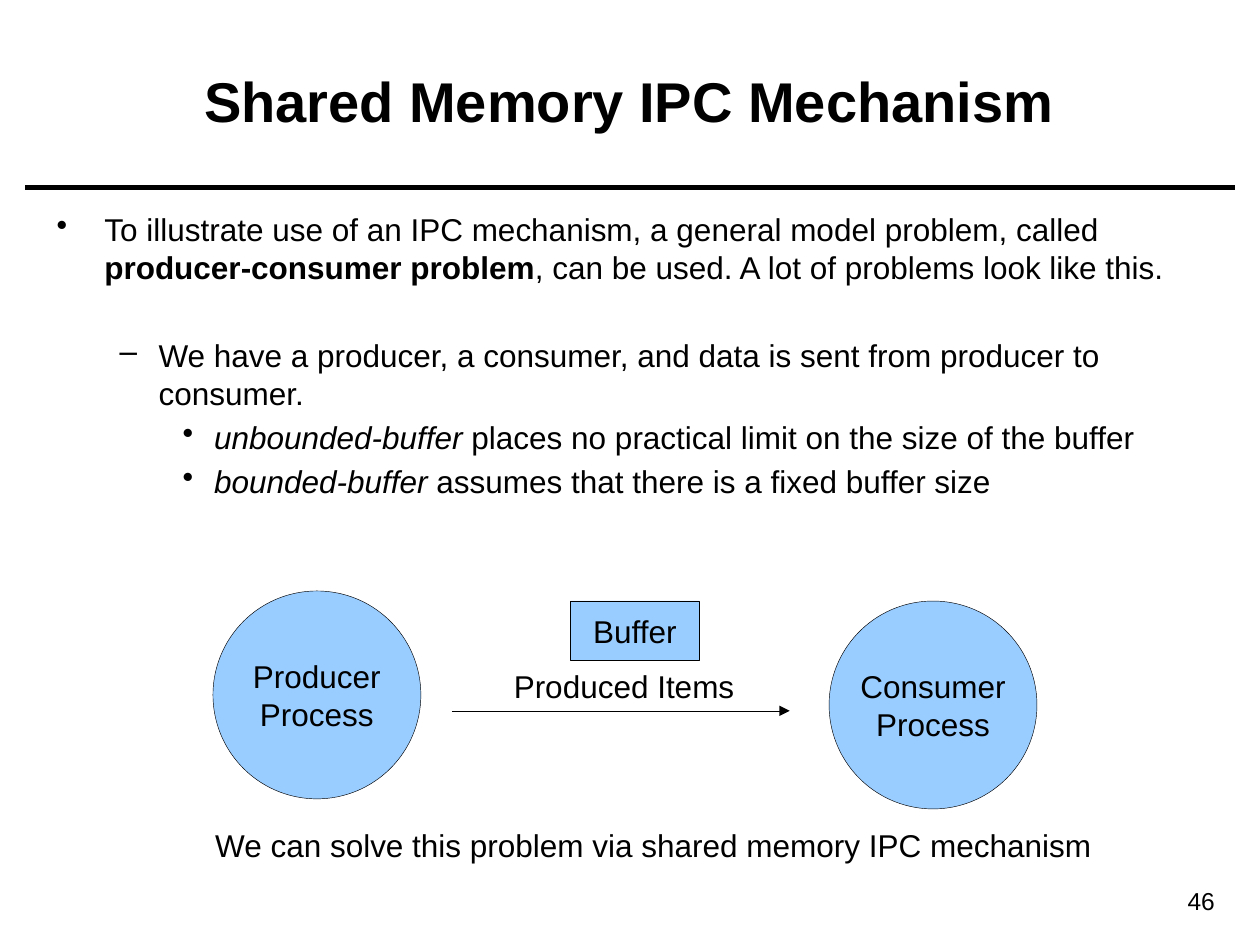
from lxml import etree
from pptx import Presentation
from pptx.dml.color import RGBColor
from pptx.enum.shapes import MSO_CONNECTOR, MSO_SHAPE
from pptx.enum.text import MSO_ANCHOR, PP_ALIGN
from pptx.oxml.ns import qn
from pptx.util import Inches, Pt

CENTER, LEFT, RIGHT = PP_ALIGN.CENTER, PP_ALIGN.LEFT, PP_ALIGN.RIGHT
MIDDLE, TOP = MSO_ANCHOR.MIDDLE, MSO_ANCHOR.TOP
OVAL, RECT = MSO_SHAPE.OVAL, MSO_SHAPE.RECTANGLE
STRAIGHT = MSO_CONNECTOR.STRAIGHT

COLORS = {"ink": "000000", "node": "99CCFF", "paper": "FFFFFF"}
FONT = "Arial"
WIDTH, HEIGHT = 10, 7.5
MARGIN, CONTENT_W = 0.35, 9.29

LEVELS = [("•", 0.38, 0.38), ("–", 0.81, 0.31), ("•", 1.25, 0.25)]
BULLETS = [
    (0, 3.6, [
        ("To illustrate use of an IPC mechanism, a general model problem, called ", ""),
        ("producer-consumer problem", "b"),
        (", can be used. A lot of problems look like this.", ""),
    ]),
    (1, 28.8, [("We have a producer, a consumer, and data is sent from producer to consumer.", "")]),
    (2, 3.6, [("unbounded-buffer", "i"),
              (" places no practical limit on the size of the buffer", "")]),
    (2, 3.6, [("bounded-buffer", "i"), (" assumes that there is a fixed buffer size", "")]),
]


def color(name):
    return RGBColor.from_string(COLORS[name])


def inches(box):
    return [Inches(v) for v in box]


def within(box, x, y, w, h):
    left, top, width, height = box
    return left + x * width, top + y * height, w * width, h * height


def style(p, size=18, align=LEFT, bold=False):
    p.alignment = align
    p.font.name = FONT
    p.font.size = Pt(size)
    p.font.bold = bold
    p.font.color.rgb = color("ink")


def write(tf, text, size=18, align=LEFT, anchor=TOP, bold=False, wrap=False):
    tf.word_wrap = wrap
    tf.vertical_anchor = anchor
    p = tf.paragraphs[0]
    p.text = text
    style(p, size, align, bold)


def add_label(s, box, text, **options):
    write(s.shapes.add_textbox(*inches(box)).text_frame, text, **options)


def add_line(s, start, end, weight, arrow=False):
    line = s.shapes.add_connector(STRAIGHT, *inches(start + end))
    line.line.color.rgb = color("ink")
    line.line.width = Pt(weight)
    if arrow:
        etree.SubElement(line.line._get_or_add_ln(), qn("a:tailEnd"), type="triangle")
    etree.SubElement(line._element.spPr, qn("a:effectLst"))


def add_node(s, kind, box, text):
    sp = s.shapes.add_shape(kind, *inches(box))
    sp.shadow.inherit = False
    sp.fill.solid()
    sp.fill.fore_color.rgb = color("node")
    sp.line.color.rgb = color("ink")
    sp.line.width = Pt(0.25)
    write(sp.text_frame, text, align=CENTER, anchor=MIDDLE)


def add_header(s, box):
    title = s.shapes.title
    title.left, title.top, title.width, title.height = inches(box)
    write(title.text_frame, "Shared Memory IPC Mechanism", 32, CENTER, MIDDLE, True, True)
    rule_y = box[1] + box[3] + 0.07
    add_line(s, (0.2, rule_y), (WIDTH - 0.2, rule_y), 3)


def add_bullets(s, box):
    tf = s.shapes.add_textbox(*inches(box)).text_frame
    tf.word_wrap = True
    for i, (level, space, runs) in enumerate(BULLETS):
        p = tf.add_paragraph() if i else tf.paragraphs[0]
        style(p)
        p.level = level
        p.space_before = Pt(space)
        mark, indent, hang = LEVELS[level]
        pPr = p._p.get_or_add_pPr()
        pPr.set("marL", str(Inches(indent)))
        pPr.set("indent", str(-Inches(hang)))
        bullet = etree.Element(qn("a:buChar"), char=mark)
        pPr.find(qn("a:defRPr")).addprevious(bullet)
        for text, emphasis in runs:
            r = p.add_run()
            r.text = text
            r.font.name = FONT
            r.font.size = Pt(18)
            r.font.bold = emphasis == "b"
            r.font.italic = emphasis == "i"


def add_diagram(s, box):
    left, top, width, height = box
    side = 1.65
    row = top + 0.08
    add_node(s, OVAL, (left, top, side, side), "Producer\vProcess")
    add_node(s, OVAL, (left + width - side, row, side, side), "Consumer\vProcess")
    arrow_y = top + 0.55 * height
    add_line(s, (left + 0.29 * width, arrow_y), (left + 0.7 * width, arrow_y), 0.25, True)
    add_label(s, within(box, 0.35, 0.32, 0.3, 0.23), "Produced Items")
    add_node(s, RECT, (left + 0.434 * width, row, 1.02, 0.47), "Buffer")


def add_footer(s, box):
    left, top, width, height = box
    add_label(s, (left, top, 7.16, 0.4),
              "We can solve this problem via shared memory IPC mechanism")
    add_label(s, (left + width - 1.04, top + height - 0.34, 1.04, 0.34), "46",
              size=14, align=RIGHT, wrap=True)


def main():
    prs = Presentation()
    prs.slide_width, prs.slide_height = Inches(WIDTH), Inches(HEIGHT)
    s = prs.slides.add_slide(prs.slide_layouts[5])
    s.background.fill.solid()
    s.background.fill.fore_color.rgb = color("paper")
    add_header(s, (MARGIN, 0.17, CONTENT_W, 1.25))
    add_bullets(s, (MARGIN, 1.62, CONTENT_W, 2.9))
    add_diagram(s, (1.69, 4.69, 6.54, 1.73))
    add_footer(s, (1.61, 6.51, 8.13, 0.81))
    prs.save("out.pptx")


if __name__ == "__main__":
    main()
